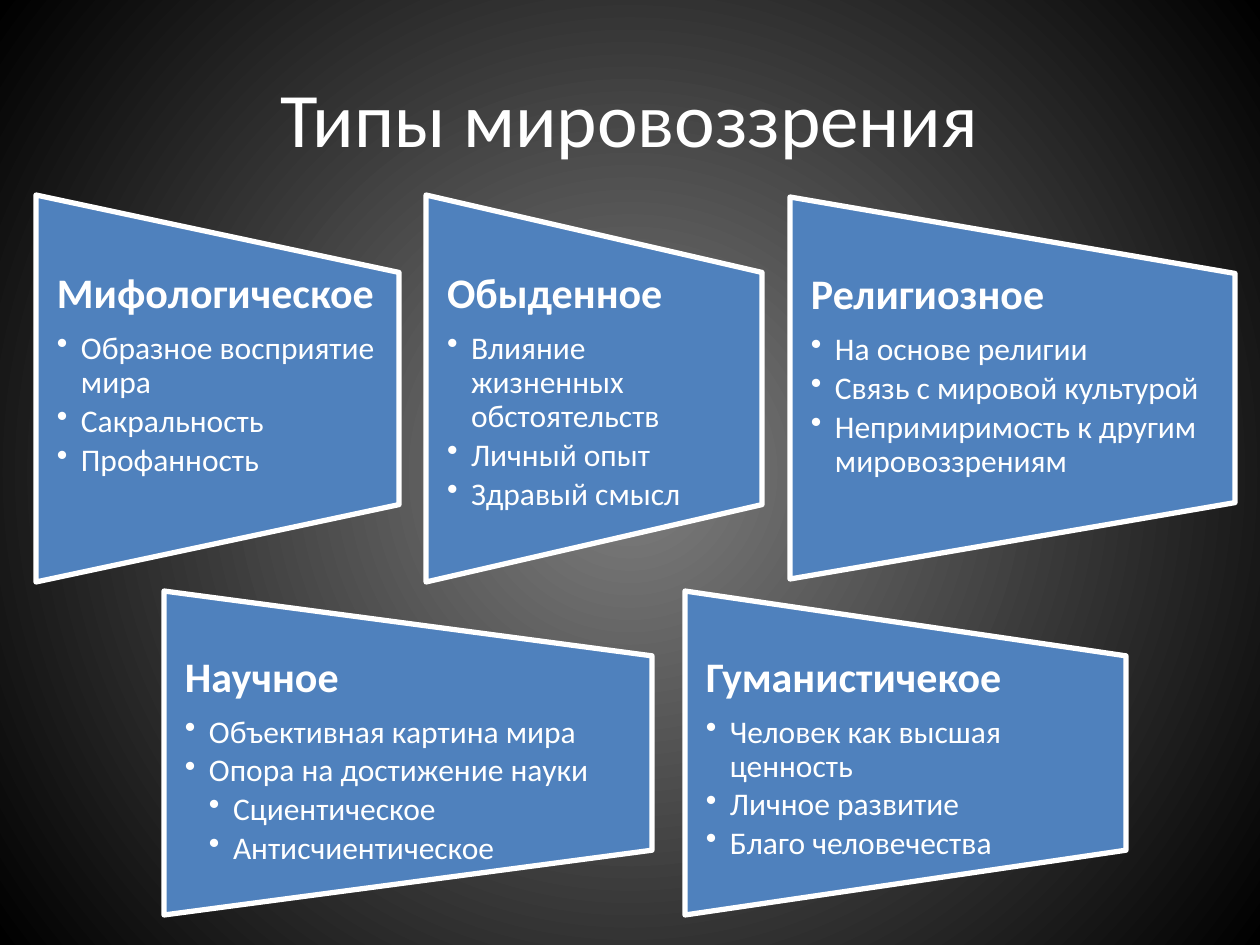
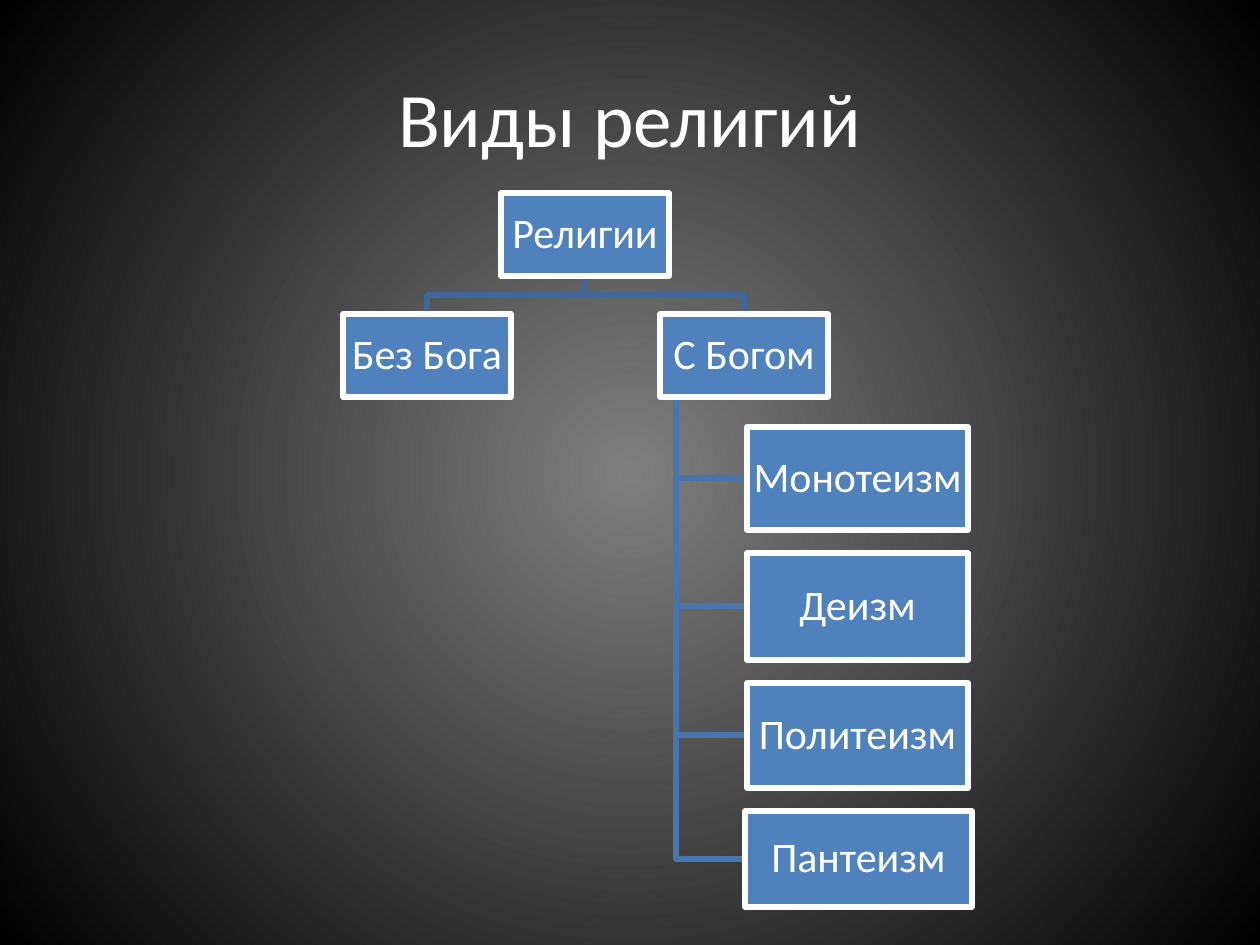
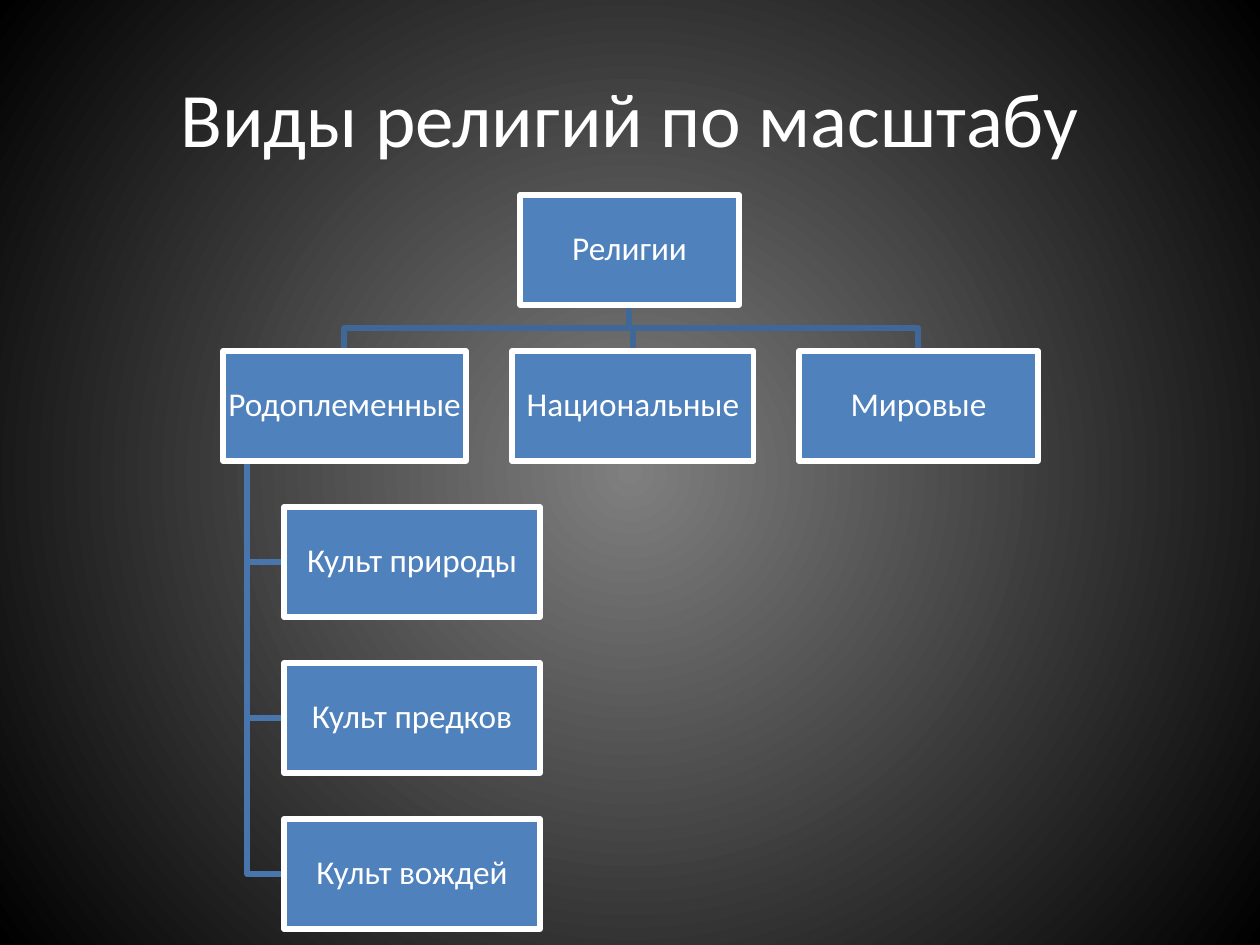
from dataclasses import dataclass
from typing import Optional

from lxml.etree import SubElement
from pptx import Presentation
from pptx.dml.color import RGBColor
from pptx.enum.shapes import MSO_SHAPE
from pptx.enum.text import MSO_ANCHOR, PP_ALIGN
from pptx.oxml.ns import qn
from pptx.util import Pt

PX = 914400 / 126  # EMU in one pixel
SLIDE_WIDTH, SLIDE_HEIGHT = 1260, 945

FONT = "Calibri"
WHITE = RGBColor(0xFF, 0xFF, 0xFF)
BLACK = RGBColor(0x00, 0x00, 0x00)
GLOW = RGBColor(0x7F, 0x7F, 0x7F)
BLUE = RGBColor(0x4F, 0x81, 0xBD)
BRANCH_BLUE = RGBColor(0x3F, 0x67, 0x97)
TRUNK_BLUE = RGBColor(0x48, 0x75, 0xAC)

STROKE = Pt(3)
BULLET_INDENT = 24
CARD_MARGIN = 21


@dataclass(frozen=True)
class Trait:
    text: str
    level: int = 1


@dataclass(frozen=True)
class Card:
    heading: str
    left: int
    top: int
    width: int
    height: int
    traits: tuple[Trait, ...]


@dataclass(frozen=True)
class Node:
    text: str
    left: int
    top: int
    width: int
    height: int

    @property
    def center(self) -> int:
        return self.left + self.width // 2

    @property
    def middle(self) -> int:
        return self.top + self.height // 2

    @property
    def bottom(self) -> int:
        return self.top + self.height


def emu(*lengths: float) -> list[int]:
    return [round(length * PX) for length in lengths]


# Shared style
def write(paragraph, text: str, *, size: float, bold: bool = False,
          align: PP_ALIGN = PP_ALIGN.LEFT, line_spacing: Optional[float] = 0.9,
          after: float = 0, level: int = 0) -> None:
    """Fill a paragraph; after is a share of the text size, level 1+ is bulleted."""
    run = paragraph.add_run()
    run.text = text
    run.font.name = FONT
    run.font.size = Pt(size)
    run.font.bold = bold
    run.font.color.rgb = WHITE
    paragraph.alignment = align
    paragraph.line_spacing = line_spacing
    paragraph.space_after = Pt(after * size)
    if level:
        paragraph.level = level
        properties = paragraph._p.get_or_add_pPr()
        margin, hanging = emu(level * BULLET_INDENT, -BULLET_INDENT)
        properties.set("marL", str(margin))
        properties.set("indent", str(hanging))
        SubElement(properties, qn("a:buChar")).set("char", "•")


def set_margins(frame, horizontal: int, vertical: int) -> None:
    frame.word_wrap = True
    frame.margin_left = frame.margin_right = emu(horizontal)[0]
    frame.margin_top = frame.margin_bottom = emu(vertical)[0]


def paint(shape) -> None:
    shape.shadow.inherit = False
    shape.fill.solid()
    shape.fill.fore_color.rgb = BLUE
    shape.line.color.rgb = WHITE
    shape.line.width = STROKE


def set_radial_background(master) -> None:
    fill = master.background.fill
    fill.gradient()
    for stop, color, position in zip(fill.gradient_stops, (GLOW, BLACK), (0, 1)):
        stop.color.rgb = color
        stop.position = position
    gradient = master.element.find(".//" + qn("a:gradFill"))
    gradient.remove(gradient.find(qn("a:lin")))
    circle = SubElement(gradient, qn("a:path"))
    circle.set("path", "circle")
    focus = SubElement(circle, qn("a:fillToRect"))
    for side in "ltrb":
        focus.set(side, "50000")


def add_titled_slide(prs, heading: str):
    slide = prs.slides.add_slide(prs.slide_layouts[5])
    title = slide.shapes.title
    title.left, title.top, title.width, title.height = emu(63, 38, 1134, 157)
    title.text_frame.vertical_anchor = MSO_ANCHOR.MIDDLE
    write(title.text_frame.paragraphs[0], heading, size=44,
          align=PP_ALIGN.CENTER, line_spacing=None)
    return slide


# Worldview cards
def draw_card(slide, card: Card) -> None:
    # A quarter turn swaps the sides around the same centre
    shift = (card.width - card.height) / 2
    panel = slide.shapes.add_shape(
        MSO_SHAPE.FLOWCHART_MANUAL_OPERATION,
        *emu(card.left + shift, card.top - shift, card.height, card.width))
    panel.rotation = 270
    paint(panel)

    # The text takes the middle three fifths of the height
    fifth = card.height / 5
    frame = slide.shapes.add_textbox(
        *emu(card.left, card.top + fifth, card.width, 3 * fifth)).text_frame
    set_margins(frame, CARD_MARGIN, 0)
    write(frame.paragraphs[0], card.heading, size=24, bold=True, after=0.35)
    for trait in card.traits:
        write(frame.add_paragraph(), trait.text, size=18, after=0.15,
              level=trait.level)


# Hierarchies
def draw_link(slide, points: list[tuple[int, int]], color: RGBColor) -> None:
    builder = slide.shapes.build_freeform(*points[0], scale=PX)
    builder.add_line_segments(points[1:], close=False)
    link = builder.convert_to_shape()
    link.shadow.inherit = False
    link.fill.background()
    link.line.color.rgb = color
    link.line.width = STROKE


def draw_node(slide, node: Node, size: float, margin: int) -> None:
    box = slide.shapes.add_shape(
        MSO_SHAPE.RECTANGLE, *emu(node.left, node.top, node.width, node.height))
    paint(box)
    frame = box.text_frame
    set_margins(frame, margin, margin)
    frame.vertical_anchor = MSO_ANCHOR.MIDDLE
    write(frame.paragraphs[0], node.text, size=size, align=PP_ALIGN.CENTER)


def draw_hierarchy(slide, root: Node, branches: list[Node], parent: Node,
                   leaves: list[Node], size: float, margin: int) -> None:
    trunk = parent.left + parent.width // 10
    for leaf in leaves:
        draw_link(slide, [(trunk, parent.bottom), (trunk, leaf.middle),
                          (leaf.left, leaf.middle)], TRUNK_BLUE)
    for branch in branches:
        bend = (root.bottom + branch.top) // 2
        draw_link(slide, [(root.center, root.bottom), (root.center, bend),
                          (branch.center, bend), (branch.center, branch.top)],
                  BRANCH_BLUE)
    for node in (root, *branches, *leaves):
        draw_node(slide, node, size, margin)


# Content
WORLDVIEWS = (
    Card("Мифологическое", 36, 195, 363, 387, (
        Trait("Образное восприятие мира"),
        Trait("Сакральность"),
        Trait("Профанность"))),
    Card("Обыденное", 426, 195, 336, 387, (
        Trait("Влияние жизненных обстоятельств"),
        Trait("Личный опыт"),
        Trait("Здравый смысл"))),
    Card("Религиозное", 790, 197, 445, 382, (
        Trait("На основе религии"),
        Trait("Связь с мировой культурой"),
        Trait("Непримиримость к другим мировоззрениям"))),
    Card("Научное", 164, 591, 488, 324, (
        Trait("Объективная картина мира"),
        Trait("Опора на достижение науки"),
        Trait("Сциентическое", 2),
        Trait("Антисчиентическое", 2))),
    Card("Гуманистичекое", 685, 591, 441, 324, (
        Trait("Человек как высшая ценность"),
        Trait("Личное развитие"),
        Trait("Благо человечества"))),
)


def build_worldviews(prs) -> None:
    slide = add_titled_slide(prs, "Типы мировоззрения")
    for card in WORLDVIEWS:
        draw_card(slide, card)


def build_religion_kinds(prs) -> None:
    slide = add_titled_slide(prs, "Виды религий")
    religions = Node("Религии", 501, 193, 168, 83)
    godless = Node("Без Бога", 343, 314, 168, 83)
    with_god = Node("С Богом", 660, 314, 168, 83)
    teachings = [
        Node("Монотеизм", 747, 427, 221, 103),
        Node("Деизм", 747, 553, 221, 107),
        Node("Политеизм", 747, 683, 221, 105),
        Node("Пантеизм", 745, 811, 227, 96),
    ]
    draw_hierarchy(slide, religions, [godless, with_god], with_god, teachings,
                   size=24, margin=2)


def build_religion_scales(prs) -> None:
    slide = add_titled_slide(prs, "Виды религий по масштабу")
    height = 110
    rows = [195 + 156 * row for row in range(5)]
    religions = Node("Религии", 520, rows[0], 219, height)
    tribal = Node("Родоплеменные", 223, rows[1], 243, height)
    national = Node("Национальные", 512, rows[1], 242, height)
    world = Node("Мировые", 799, rows[1], 239, height)
    cults = [Node(f"Культ {cult}", 284, top, 256, height)
             for cult, top in zip(("природы", "предков", "вождей"), rows[2:])]
    draw_hierarchy(slide, religions, [tribal, national, world], tribal, cults,
                   size=19, margin=1)


def main() -> None:
    prs = Presentation()
    prs.slide_width, prs.slide_height = emu(SLIDE_WIDTH, SLIDE_HEIGHT)
    set_radial_background(prs.slide_master)
    build_worldviews(prs)
    build_religion_kinds(prs)
    build_religion_scales(prs)
    prs.save("out.pptx")


if __name__ == "__main__":
    main()
